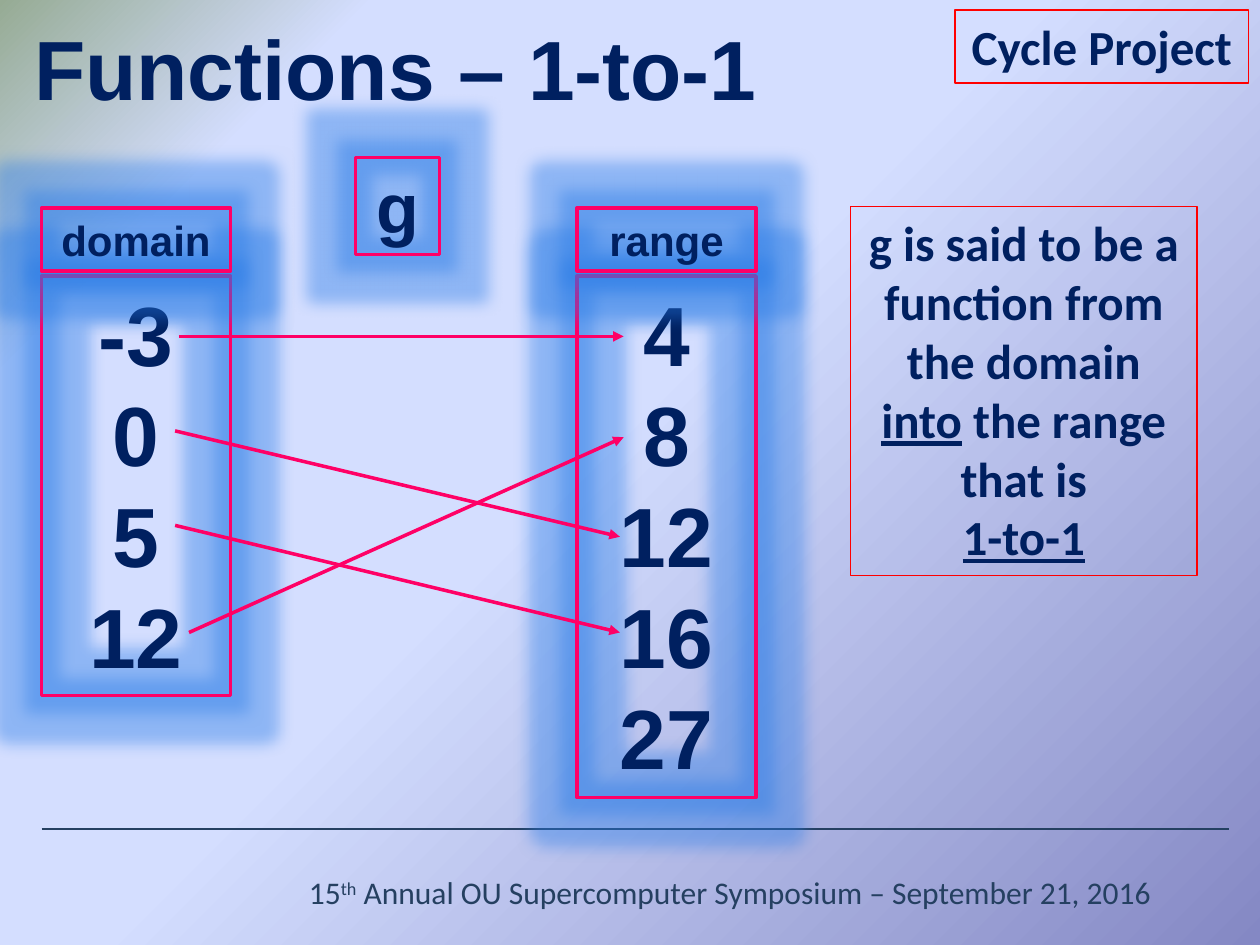
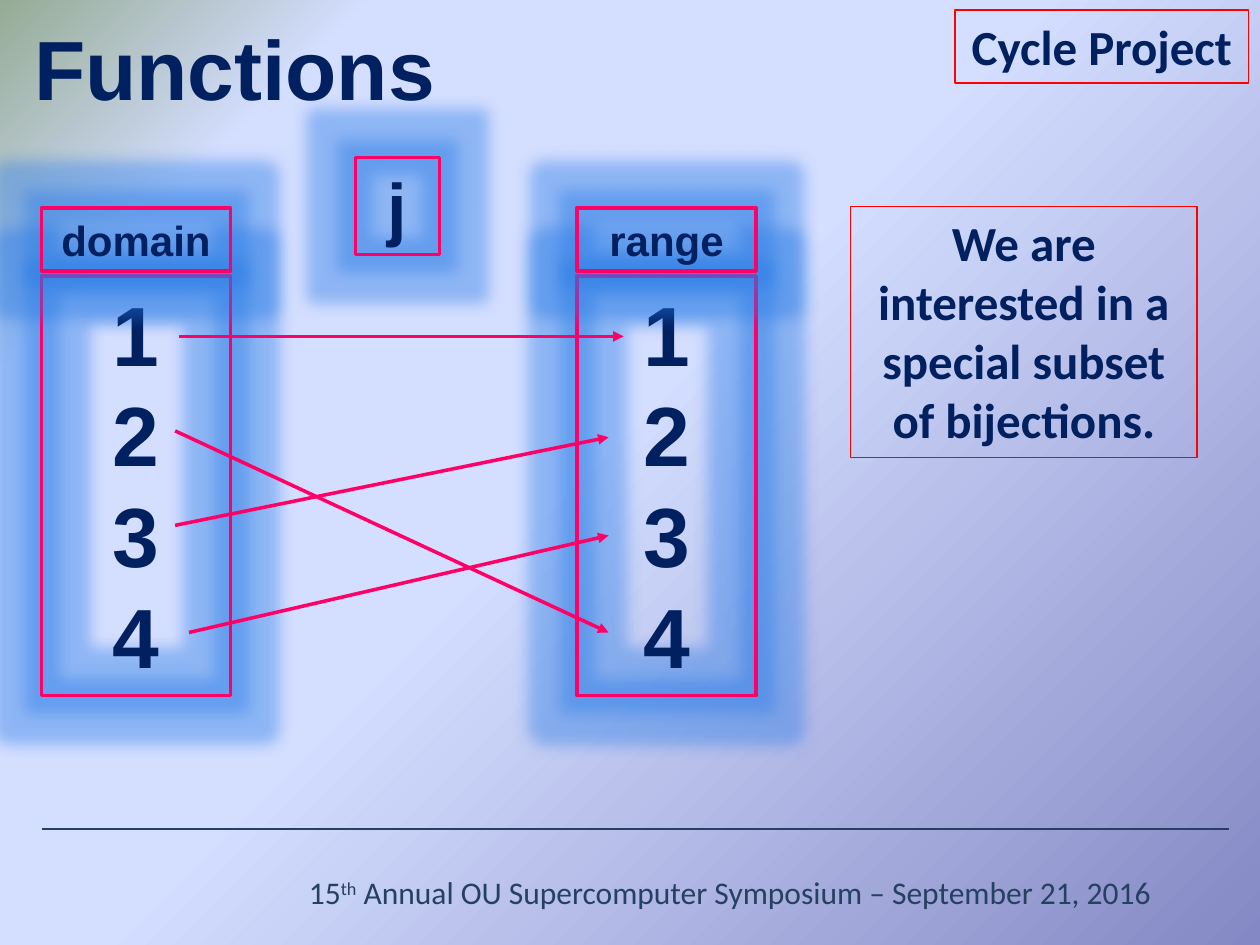
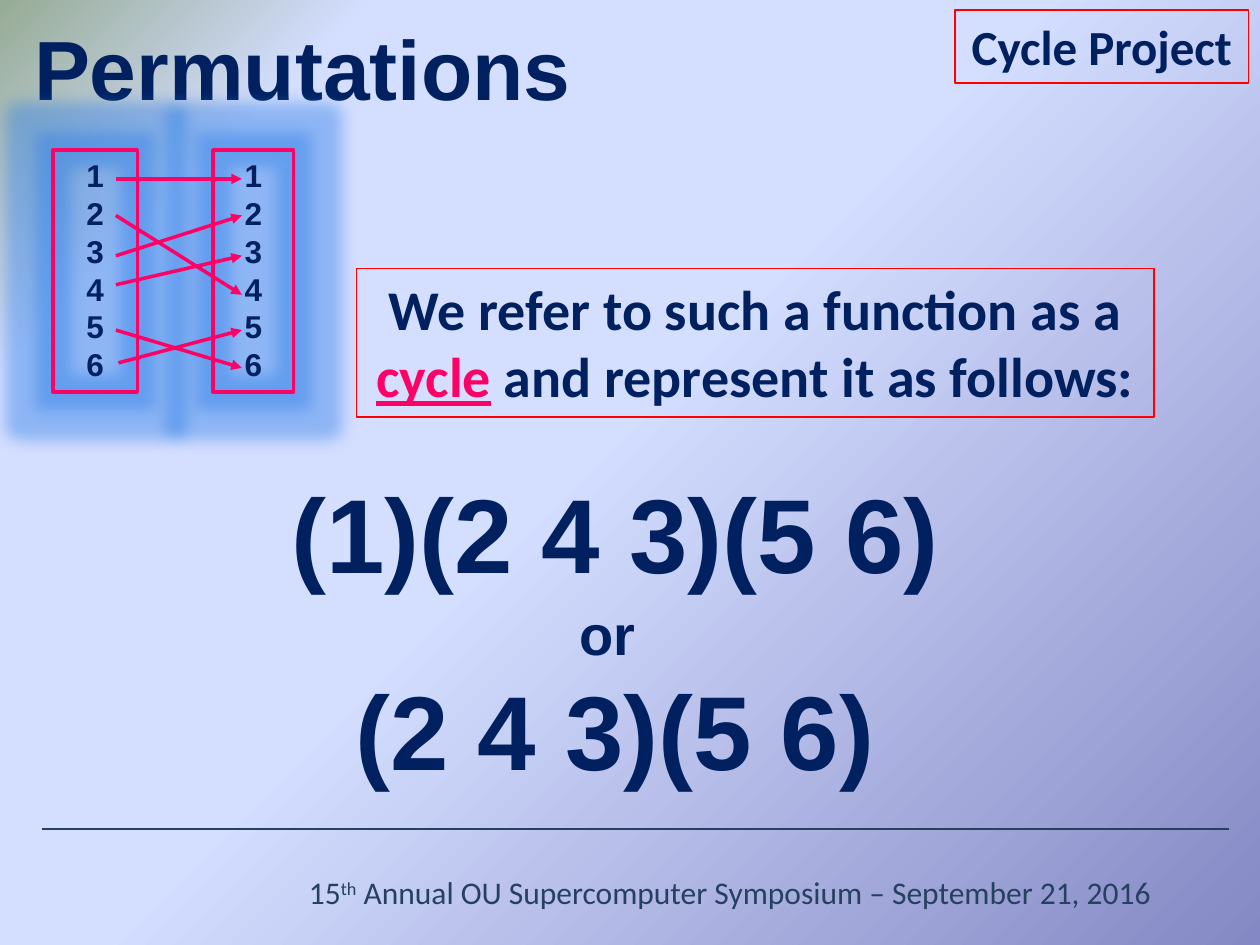
import pptx
import pptx.util
import pptx.dml.color
import pptx.enum.shapes
import pptx.enum.text
import pptx.oxml
import pptx.oxml.ns

RGB = pptx.dml.color.RGBColor
NAVY = RGB(0x00, 0x20, 0x60)
SLATE = RGB(0x25, 0x40, 0x61)
PINK = RGB(0xFF, 0x00, 0x66)
RED = RGB(0xFF, 0x00, 0x00)
PALE = RGB(0xB0, 0xC6, 0xE1)
GLOW = RGB(0x26, 0x7A, 0xE6)
STOPS = [(0, "8488C4"), (53, "D4DEFF"), (83, "D4DEFF"), (100, "96AB94")]

PX = 9144  # 100 px to the inch
ALIGN = pptx.enum.text.PP_ALIGN
NS = pptx.oxml.ns.nsdecls("a")


def px(n):
    return pptx.util.Emu(n * PX)


def xml(text):
    """Parse one drawing element; the first tag gets the namespace."""
    head, rest = text.split(" ", 1)
    return pptx.oxml.parse_xml(f"{head} {NS} {rest}")


# ---- text ----
FRAME = {"word_wrap": True, "vertical_anchor": pptx.enum.text.MSO_ANCHOR.TOP,
         "auto_size": pptx.enum.text.MSO_AUTO_SIZE.NONE,
         "margin_left": px(10), "margin_right": px(10),
         "margin_top": px(5), "margin_bottom": px(5)}


def style(font, form):
    for key, val in form.items():
        if key == "color":
            font.color.rgb = val
        else:
            setattr(font, key, val)


def plain(size, color=NAVY, bold=True):
    return {"name": "Calibri", "size": pptx.util.Pt(size), "bold": bold, "color": color}


def write(shape, paras, form, align=ALIGN.CENTER, edge=False):
    """Each paragraph is a string or a list of (text, extra format) runs."""
    frame = shape.text_frame
    for key, val in FRAME.items():
        setattr(frame, key, val)
    for i, runs in enumerate(paras):
        para = frame.add_paragraph() if i else frame.paragraphs[0]
        para.alignment = align
        for text, extra in [(runs, {})] if isinstance(runs, str) else runs:
            run = para.add_run()
            run.text = text
            extra = dict(extra)
            base = extra.pop("base", None)
            style(run.font, {**form, **extra})
            props = run.font._element
            if base:
                props.set("baseline", base)
            if edge:
                props.insert(0, xml(f'<a:ln w="9525"><a:solidFill><a:srgbClr val="{PALE}"/>'
                                    "</a:solidFill></a:ln>"))


def bold(shape, paras, size, align=ALIGN.CENTER):
    write(shape, paras, {**plain(size), "name": "Arial"}, align, edge=True)


# ---- shapes ----
def label(slide, box):
    return slide.shapes.add_textbox(*map(px, box))


def frame(slide, box, color, width):
    rect = slide.shapes.add_shape(pptx.enum.shapes.MSO_SHAPE.RECTANGLE, *map(px, box))
    rect.shadow.inherit = False
    rect.fill.background()
    rect.line.color.rgb = color
    rect.line.width = pptx.util.Pt(width)
    return rect


def note(slide, box, paras, size):
    write(frame(slide, box, RED, 0.75), paras, plain(size))


def neon(slide, box, paras, size):
    """Pink frame with a blue glow."""
    rect = frame(slide, box, PINK, 2)
    effects = rect._element.spPr.find(pptx.oxml.ns.qn("a:effectLst"))
    effects.append(xml(f'<a:glow rad="228600"><a:srgbClr val="{GLOW}">'
                       '<a:alpha val="40000"/></a:srgbClr></a:glow>'))
    bold(rect, paras, size)


def line(slide, start, end, color, width):
    link = slide.shapes.add_connector(pptx.enum.shapes.MSO_CONNECTOR.STRAIGHT,
                                      *map(px, (*start, *end)))
    link.line.color.rgb = color
    link.line.width = pptx.util.Pt(width)
    link._element.spPr.append(xml("<a:effectLst />"))
    return link


def arrows(slide, left, top, starts, ends):
    for (x, y), (to_x, to_y) in zip(starts, ends):
        link = line(slide, (left + x, top + y), (left + to_x, top + to_y), PINK, 2)
        link.line._get_or_add_ln().append(xml('<a:tailEnd type="triangle"/>'))


# ---- shared parts ----
def backdrop(master):
    master.background.fill.solid()
    props = master.element.xpath(".//p:bgPr")[0]
    stops = "".join(f'<a:gs pos="{pos * 1000}"><a:srgbClr val="{color}"/></a:gs>'
                    for pos, color in STOPS)
    props.replace(props[0], xml(
        f'<a:gradFill rotWithShape="1"><a:gsLst>{stops}</a:gsLst><a:path path="circle">'
        '<a:fillToRect l="100000" t="100000"/></a:path></a:gradFill>'))


def footer(slide):
    """Put the rule and the footer on the layout, so every slide shows them."""
    layout = slide.slide_layout
    for spare in list(layout.placeholders)[1:]:
        spare._element.getparent().remove(spare._element)
    rule = line(slide, (33, 658), (975, 658), SLATE, 1.25)
    text = label(slide, (217, 688, 725, 67))
    write(text, [[("15", {}), ("th", {"base": "30000"}),
                  (" Annual OU Supercomputer Symposium – September 21, 2016", {})]],
          plain(18, SLATE, False))
    for part in (rule, text):
        layout.shapes._spTree.append(part._element)


def start(deck, title):
    slide = deck.slides.add_slide(deck.slide_layouts[5])
    head = slide.shapes.title
    for key, val in zip(("left", "top", "width", "height"), (17, 8, 742, 91)):
        setattr(head, key, px(val))
    bold(head, [title], 48, ALIGN.LEFT)
    note(slide, (758, 8, 233, 58), ["Cycle Project"], 28)
    return slide


# ---- slide types ----
def mapping(slide, box, name, domain, target, ends):
    """Domain and range columns with their labels, arrows and function name."""
    left, top = box
    columns = [(left, 150, "domain", domain), (left + 425, 142, "range", target)]
    for x, wide, _, items in columns:
        neon(slide, (x, top + 94, wide, 9 + 81 * len(items)), items, 48)
    for x, wide, text, _ in columns:
        neon(slide, (x, top + 40, wide, 50), [text], 24)
    starts = [(109, 142), (106, 217), (106, 292), (117, 377)]
    arrows(slide, left, top, starts, ends)
    neon(slide, (left + 249, top, 67, 77), [name], 40)


def small(slide, box, items, goals):
    """Small mapping; goals holds the target row of each item."""
    left, top = box
    for x, wide in ((0, 67), (127, 64)):
        neon(slide, (left + x, top, wide, 192), items, 18)
    starts = [(50, 23), (50, 52), (50, 84), (50, 107), (50, 143), (52, 169)]
    rows = [23, 52, 84, 115, 143, 173]
    arrows(slide, left, top, starts, [(150, rows[goal - 1]) for goal in goals])


def cycles(slide, box):
    left, top, wide = box
    lines = [("(1)(2 4 3)(5 6)", 0, 0, wide, 111, 60), ("(2 4 3)(5 6)", 0, 156, wide, 111, 60),
             ("or", 316, 104, 98, 64, 32)]
    for text, x, y, width, high, size in lines:
        bold(label(slide, (left + x, top + y, width, high)), [text], size)


def main():
    deck = pptx.Presentation()
    deck.slide_width, deck.slide_height = px(1000), px(750)
    backdrop(deck.slide_master)
    under = {"underline": True}

    # One-to-one function
    slide = start(deck, "Functions – 1-to-1")
    footer(slide)
    mapping(slide, (33, 125), "g", ["-3", "0", "5", "12"], ["4", "8", "12", "16", "27"],
            [(462, 142), (459, 301), (459, 377), (462, 222)])
    note(slide, (675, 164, 275, 293),
         [[("g is said to be a function from the domain ", {}), ("into", under),
           (" the range", {})], "that is", [("1-to-1", under)]], 28)

    # Bijection
    slide = start(deck, "Functions")
    digits = list("1234")
    mapping(slide, (33, 125), "j", digits, digits,
            [(462, 142), (450, 377), (450, 222), (450, 300)])
    note(slide, (675, 164, 275, 199),
         ["We are interested in a special subset of bijections."], 28)

    # Cycle notation
    slide = start(deck, "Permutations")
    small(slide, (42, 119), list("123456"), [1, 4, 2, 3, 6, 5])
    note(slide, (283, 213, 633, 118),
         [[("We refer to such a function as a ", {}), ("cycle", {**under, "color": PINK}),
           (" and represent it as follows:", {})]], 32)
    cycles(slide, (117, 367, 742))

    deck.save("out.pptx")


if __name__ == "__main__":
    main()
